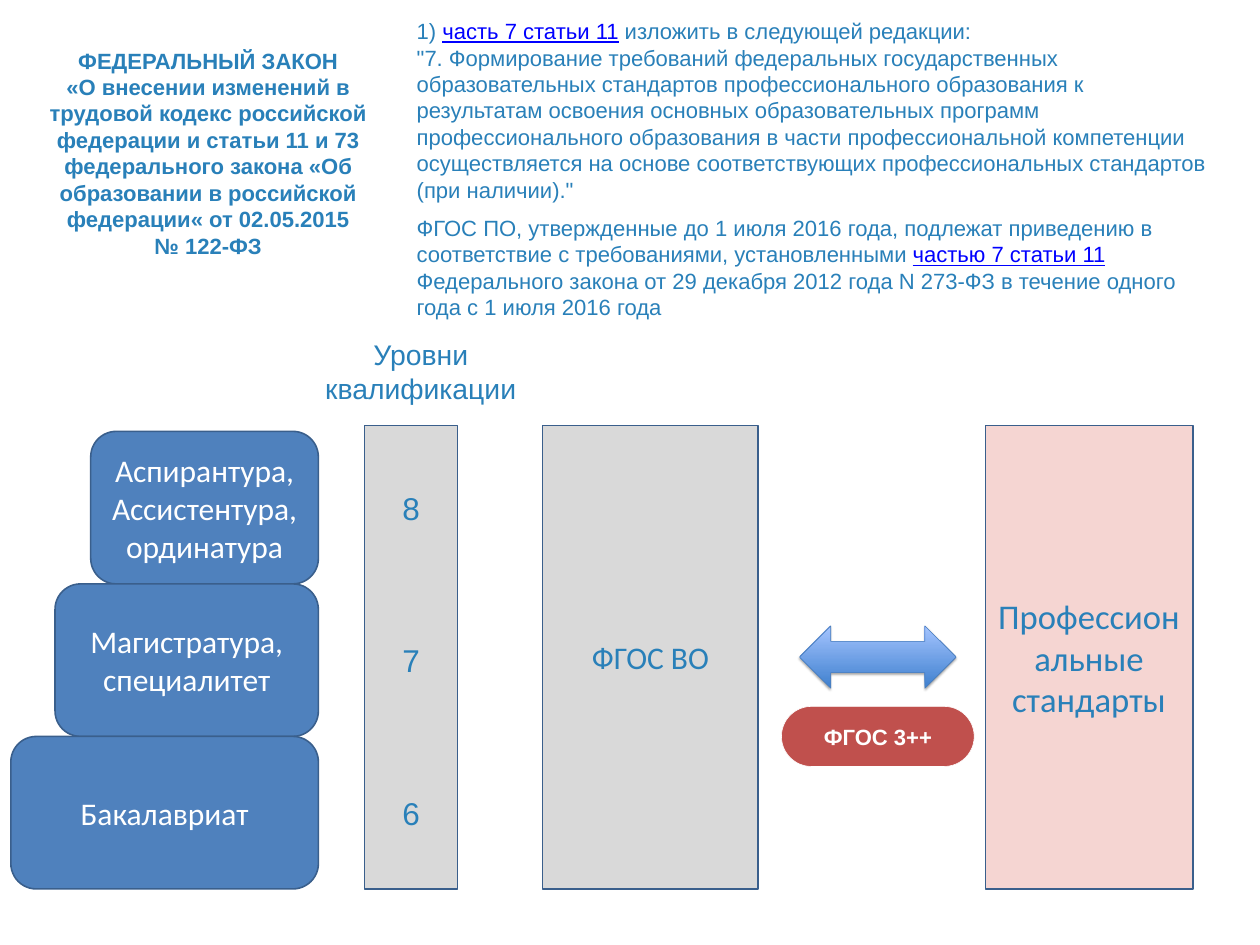
from lxml.etree import SubElement
from pptx import Presentation
from pptx.dml.color import RGBColor
from pptx.enum.shapes import MSO_SHAPE as Preset
from pptx.enum.text import MSO_ANCHOR as Anchor, MSO_AUTO_SIZE as AutoSize, PP_ALIGN as Align
from pptx.oxml.ns import qn
from pptx.util import Inches, Pt

SLIDE_WIDTH = Inches(22.22)
SLIDE_HEIGHT = Inches(16.67)
COLUMN = SLIDE_WIDTH / 100
ROW = SLIDE_HEIGHT / 100

BLUE_TEXT = RGBColor(0x29, 0x80, 0xB9)
LINK = RGBColor(0x00, 0x00, 0xFF)
WHITE = RGBColor(0xFF, 0xFF, 0xFF)
GREY = RGBColor(0xD9, 0xD9, 0xD9)
PINK = RGBColor(0xF5, 0xD5, 0xD2)
STEP_BLUE = RGBColor(0x4F, 0x81, 0xBD)
OUTLINE = RGBColor(0x3A, 0x5F, 0x8C)
RED = RGBColor(0xC0, 0x50, 0x4D)
ARROW_DARK = RGBColor(0x3F, 0x80, 0xCE)
ARROW_LIGHT = RGBColor(0xA4, 0xC4, 0xFF)
ARROW_LINE = RGBColor(0x4B, 0x7E, 0xBC)

BAR_TOP, BAR_HEIGHT = 45.05, 49.01
LEVEL_BAR_LEFT, LEVEL_BAR_WIDTH = 28.94, 7.38
STEP_TOP, STEP_HEIGHT, STEP_RIGHT = 45.65, 16.14, 25.27
DIGIT_WIDTH, DIGIT_HEIGHT = 2.3, 4.62
LAW_LEFT = 32.63

STEPS = [
    ("8", 7.2, ["Аспирантура,", "Ассистентура,\nординатура"]),
    ("7", 4.37, ["Магистратура, специалитет"]),
    ("6", 0.86, ["Бакалавриат"]),
]
LAW_TITLE = [
    "ФЕДЕРАЛЬНЫЙ ЗАКОН",
    "«О внесении изменений в трудовой кодекс российской федерации и статьи 11 и 73 "
    "федерального закона «Об образовании в российской федерации« от 02.05.2015",
    "№ 122-ФЗ",
]
ARTICLE = [
    [("1) ", False), ("часть 7 статьи 11", True), (" изложить в следующей редакции:", False)],
    "\"7. Формирование требований федеральных государственных образовательных стандартов "
    "профессионального образования к результатам освоения основных образовательных программ "
    "профессионального образования в части профессиональной компетенции осуществляется на основе "
    "соответствующих профессиональных стандартов (при наличии).\"",
]
DEADLINE = [[
    ("ФГОС ПО, утвержденные до 1 июля 2016 года, подлежат приведению в соответствие "
     "с требованиями, установленными ", False),
    ("частью 7 статьи 11", True),
    (" Федерального закона от 29 декабря 2012 года N 273-ФЗ в течение одного года "
     "с 1 июля 2016 года", False),
]]


def place(left, top, width, height):
    return [round(left * COLUMN), round(top * ROW), round(width * COLUMN), round(height * ROW)]


def write(box, paragraphs, size, face="Arial", color=BLUE_TEXT, bold=False, align=Align.CENTER):
    frame = box.text_frame
    for index, content in enumerate(paragraphs):
        para = frame.paragraphs[0] if index == 0 else frame.add_paragraph()
        para.alignment = align
        spans = [(content, False)] if isinstance(content, str) else content
        for text, linked in spans:
            for number, line in enumerate(text.split("\n")):
                if number:
                    para.add_line_break()
                span = para.add_run()
                span.text = line
                span.font.name = face
                span.font.size = Pt(size)
                span.font.bold = bold
                span.font.underline = linked
                span.font.color.rgb = LINK if linked else color


def add_text(page, area, paragraphs, size, wrap=True, **style):
    box = page.shapes.add_textbox(*place(*area))
    box.text_frame.word_wrap = wrap
    box.text_frame.auto_size = AutoSize.SHAPE_TO_FIT_TEXT
    write(box, paragraphs, size, **style)


def add_block(page, preset, area, fill, line=OUTLINE, line_width=2, insets=(0.21, 0.11)):
    block = page.shapes.add_shape(preset, *place(*area))
    block.shadow.inherit = False
    block.fill.solid()
    block.fill.fore_color.rgb = fill
    block.line.color.rgb = line
    block.line.width = Pt(line_width)
    frame = block.text_frame
    frame.word_wrap = True
    frame.vertical_anchor = Anchor.MIDDLE
    frame.margin_left = frame.margin_right = Inches(insets[0])
    frame.margin_top = frame.margin_bottom = Inches(insets[1])
    return block


def add_exchange_arrow(page, area):
    arrow = add_block(page, Preset.LEFT_RIGHT_ARROW, area, ARROW_DARK, ARROW_LINE, 0.75)
    arrow.fill.gradient()
    arrow.fill.gradient_angle = 90
    for stop, color in zip(arrow.fill.gradient_stops, (ARROW_DARK, ARROW_LIGHT)):
        stop.color.rgb = color
    effects = arrow.element.spPr.find(qn("a:effectLst"))
    shadow = SubElement(effects, qn("a:outerShdw"), blurRad=str(Pt(3.1)), dist=str(Pt(1.8)),
                        dir="5400000", rotWithShape="0")
    tint = SubElement(shadow, qn("a:srgbClr"), val="000000")
    SubElement(tint, qn("a:alpha"), val="35000")


def add_steps(page):
    digit_left = LEVEL_BAR_LEFT + (LEVEL_BAR_WIDTH - DIGIT_WIDTH) / 2
    for index, (level, left, lines) in enumerate(STEPS):
        top = STEP_TOP + index * STEP_HEIGHT
        step = add_block(page, Preset.ROUNDED_RECTANGLE,
                         (left, top, STEP_RIGHT - left, STEP_HEIGHT), STEP_BLUE)
        write(step, lines, 40, "Calibri", WHITE)
        digit_top = top + (STEP_HEIGHT - DIGIT_HEIGHT) / 2
        add_text(page, (digit_left, digit_top, DIGIT_WIDTH, DIGIT_HEIGHT), [level], 40, wrap=False)


def main():
    deck = Presentation()
    deck.slide_width = SLIDE_WIDTH
    deck.slide_height = SLIDE_HEIGHT
    page = deck.slides.add_slide(deck.slide_layouts[6])

    add_text(page, (2.79, 4.68, 27.45, 23.22), LAW_TITLE, 28, bold=True)
    add_text(page, (LAW_LEFT, 1.56, 64.13, 20.4), ARTICLE, 28, align=Align.LEFT)
    add_text(page, (LAW_LEFT, 22.38, 61.88, 11.94), DEADLINE, 28, align=Align.LEFT)
    add_text(page, (25.29, 35.39, 16.2, 7.86), ["Уровни квалификации"], 36)

    add_block(page, Preset.RECTANGLE, (LEVEL_BAR_LEFT, BAR_TOP, LEVEL_BAR_WIDTH, BAR_HEIGHT), GREY)
    add_steps(page)

    education = add_block(page, Preset.RECTANGLE, (43.07, BAR_TOP, 17.1, BAR_HEIGHT), GREY)
    write(education, ["ФГОС ВО"], 40, "Calibri")
    profession = add_block(page, Preset.RECTANGLE, (78.2, BAR_TOP, 16.47, BAR_HEIGHT), PINK,
                           insets=(0.11, 0.21))
    write(profession, ["Профессиональные стандарты"], 44, "Calibri")

    add_exchange_arrow(page, (63.46, 66.23, 12.42, 6.6))
    badge = add_block(page, Preset.ROUNDED_RECTANGLE, (62.02, 74.75, 15.3, 6.36), RED, WHITE, 0.75,
                      insets=(0.1, 0.05))
    badge.adjustments[0] = 0.5
    write(badge, ["ФГОС 3++"], 28, color=WHITE, bold=True)

    deck.save("out.pptx")


if __name__ == "__main__":
    main()
